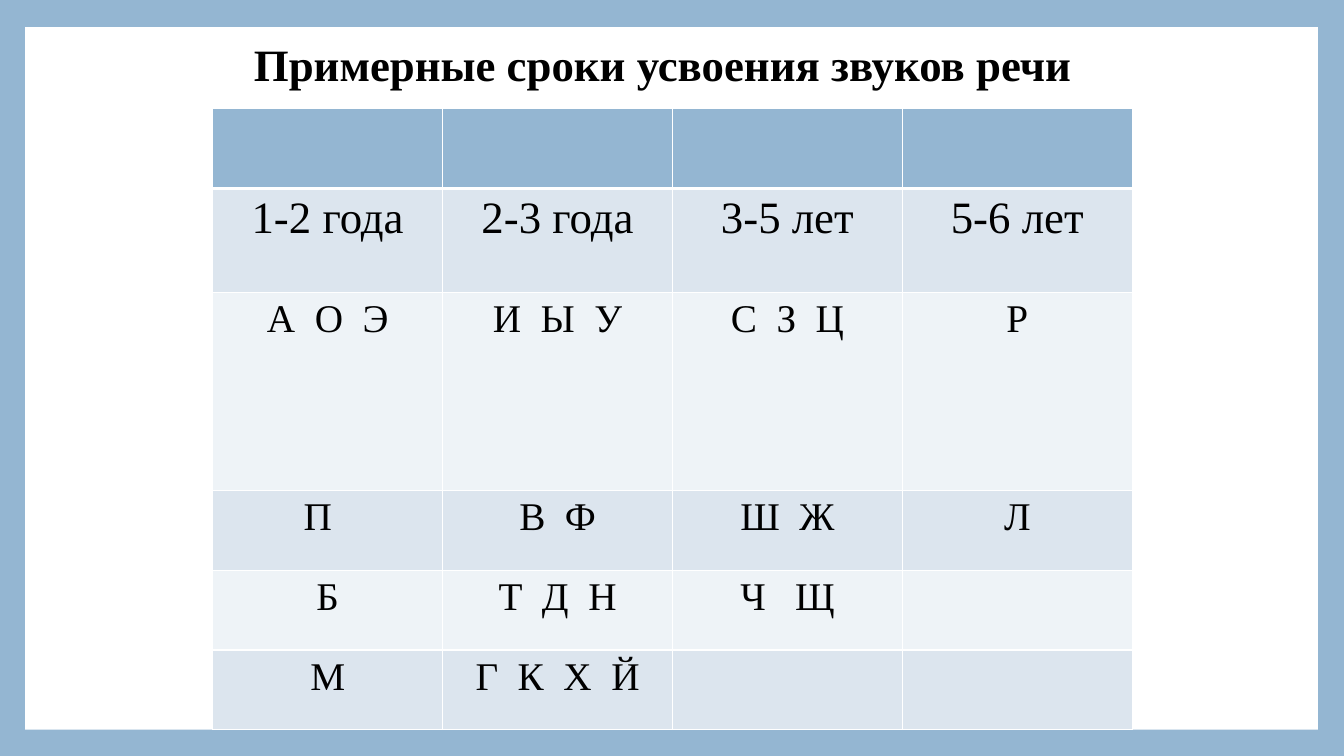
"""Build a slide with a table of when children learn speech sounds."""
import pptx
import pptx.util
import pptx.dml.color
import pptx.enum.shapes
import pptx.enum.text
import pptx.oxml
import pptx.oxml.ns

Inches = pptx.util.Inches
Pt = pptx.util.Pt

TITLE = "Примерные сроки усвоения звуков речи"
ROWS = [
    ("", "", "", ""),
    ("1-2 года", "2-3 года", "3-5 лет", "5-6 лет"),
    ("А  О  Э", "И  Ы  У", "С  З  Ц", "Р"),
    ("П  ", "В  Ф", "Ш  Ж", "Л"),
    ("Б", "Т  Д  Н", "Ч   Щ", ""),
    ("М", "Г  К  Х  Й", "", ""),
]
HEIGHTS = [0.79, 1.03, 1.97, 0.79, 0.79, 0.79]
WIDTH = 2.28
FONT = "Times New Roman"
COLORS = {
    "blue": "94B6D2",
    "white": "FFFFFF",
    "dark": "DCE5EE",
    "light": "EEF3F7",
    "text": "000000",
}


def paint(fill, name):
    fill.solid()
    fill.fore_color.rgb = pptx.dml.color.RGBColor.from_string(COLORS[name])


def style(para, size, bold=False):
    for run in para.runs:
        font = run.font
        font.name, font.size, font.bold = FONT, Pt(size), bold
        paint(font.fill, "text")


def edge(cell, side, points):
    line = pptx.oxml.parse_xml(
        f'<a:ln{side} {pptx.oxml.ns.nsdecls("a")} w="{Pt(points)}">'
        f'<a:solidFill><a:srgbClr val="{COLORS["white"]}"/></a:solidFill>'
        f'</a:ln{side}>'
    )
    cell._tc.get_or_add_tcPr().append(line)


def fill_cell(cell, row, text):
    for side in "LRTB":
        thick = (row, side) in ((0, "B"), (1, "T"))
        edge(cell, side, 3 if thick else 1)
    paint(cell.fill, "blue" if row == 0 else "dark" if row % 2 else "light")
    cell.text_frame.text = text
    para = cell.text_frame.paragraphs[0]
    para.alignment = pptx.enum.text.PP_ALIGN.CENTER
    style(para, 32 if row == 1 else 28)


def main():
    deck = pptx.Presentation()
    deck.slide_width, deck.slide_height = Inches(13.33), Inches(7.5)
    slide = deck.slides.add_slide(deck.slide_layouts[6])
    paint(slide.background.fill, "blue")

    panel = slide.shapes.add_shape(
        pptx.enum.shapes.MSO_SHAPE.RECTANGLE,
        Inches(0.25), Inches(0.27), Inches(12.82), Inches(6.97))
    panel.shadow.inherit = False
    paint(panel.fill, "white")
    panel.line.fill.background()

    title = slide.shapes.add_textbox(
        Inches(2.42), Inches(0.32), Inches(8.5), Inches(0.64))
    frame = title.text_frame
    frame.word_wrap = True
    frame.auto_size = pptx.enum.text.MSO_AUTO_SIZE.SHAPE_TO_FIT_TEXT
    frame.text = TITLE
    style(frame.paragraphs[0], 32, True)

    count = len(ROWS[0])
    table = slide.shapes.add_table(
        len(ROWS), count, Inches(2.11), Inches(1.08),
        Inches(WIDTH * count), Inches(sum(HEIGHTS))).table
    for col in table.columns:
        col.width = Inches(WIDTH)
    for row, (texts, height) in enumerate(zip(ROWS, HEIGHTS)):
        table.rows[row].height = Inches(height)
        for col, text in enumerate(texts):
            fill_cell(table.cell(row, col), row, text)

    deck.save("out.pptx")


if __name__ == "__main__":
    main()
